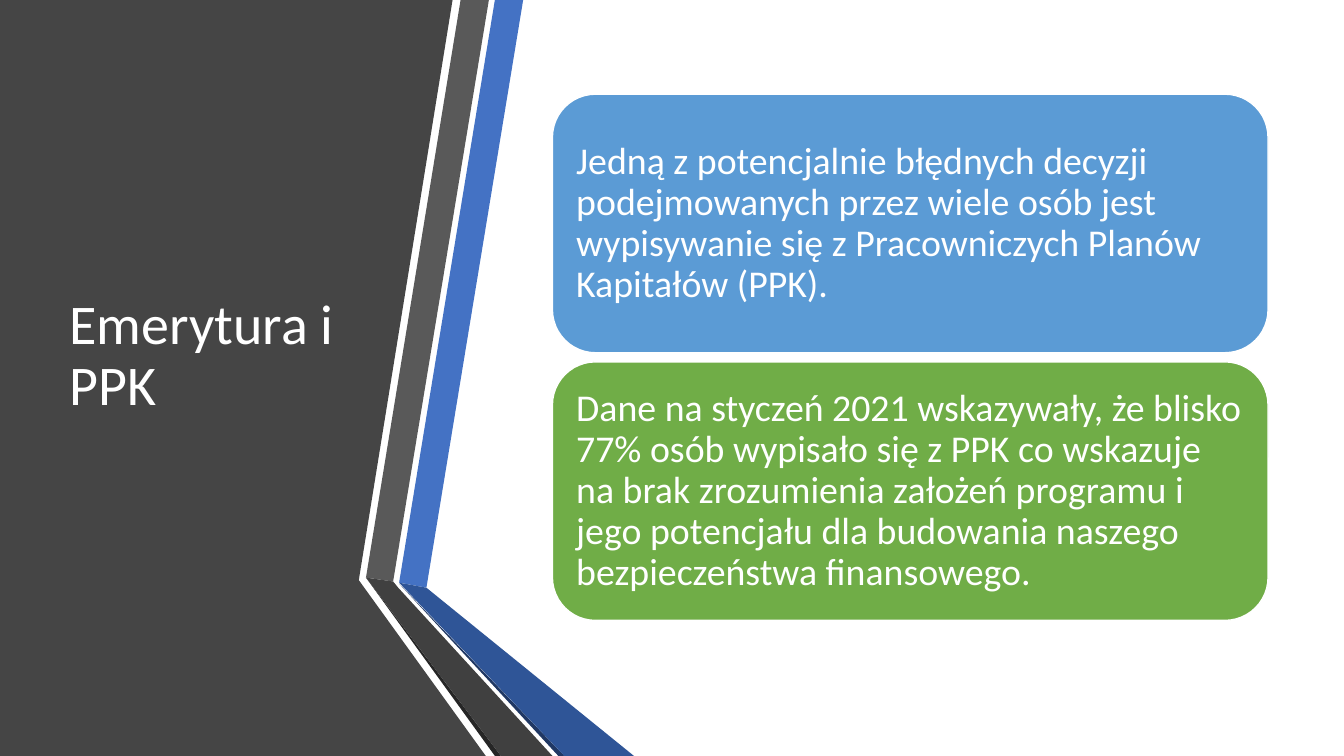
import pptx
import pptx.dml.color
import pptx.enum.shapes
import pptx.enum.text
import pptx.util

Pt = pptx.util.Pt
RGBColor = pptx.dml.color.RGBColor

WHITE = RGBColor(0xFF, 0xFF, 0xFF)
PANEL_GRAY = RGBColor(0x45, 0x45, 0x45)
BAND_BLUE = RGBColor(0x44, 0x72, 0xC4)
BAND_GRAY = RGBColor(0x59, 0x59, 0x59)
EDGE_BLACK = RGBColor(0x26, 0x26, 0x26)
EDGE_NAVY = RGBColor(0x20, 0x38, 0x64)
FOLD_BLUE = RGBColor(0x2F, 0x55, 0x97)
FOLD_GRAY = RGBColor(0x40, 0x40, 0x40)
CARD_BLUE = RGBColor(0x5B, 0x9B, 0xD5)
CARD_GREEN = RGBColor(0x70, 0xAD, 0x47)

WIDTH, HEIGHT = 960, 540
CARD_LEFT, CARD_TOP, CARD_WIDTH, CARD_HEIGHT = 394.6, 67.3, 511.2, 184.7
CARD_STEP = 191.2

POLYGONS = [
    (PANEL_GRAY, [(0, 0), (323.3, 0), (256.3, 414.4), (347, HEIGHT), (0, HEIGHT)]),
    (BAND_BLUE, [(285.1, 416.2), (304.6, 419.8), (373.7, 0), (353.5, 0)]),
    (BAND_GRAY, [(349.2, 0), (329, 0), (261.4, 412.6), (280.8, 415.4)]),
    (EDGE_BLACK, [(261.4, 412.6), (353.5, HEIGHT), (357.8, HEIGHT)]),
    (EDGE_NAVY, [(285.1, 416.9), (398.9, HEIGHT), (403.2, HEIGHT)]),
    (FOLD_BLUE, [(285.1, 416.2), (403.2, HEIGHT), (452.9, HEIGHT), (304.6, 419.8)]),
    (FOLD_GRAY, [(394.6, HEIGHT), (284.4, 419.8), (280.8, 415.4), (261.4, 412.6),
                 (357.8, HEIGHT)]),
]

CARDS = [
    (CARD_BLUE, "Jedną z potencjalnie błędnych decyzji podejmowanych przez wiele osób "
                "jest wypisywanie się z Pracowniczych Planów Kapitałów (PPK)."),
    (CARD_GREEN, "Dane na styczeń 2021 wskazywały, że blisko 77% osób wypisało się z PPK "
                 "co wskazuje na brak zrozumienia założeń programu i jego potencjału dla "
                 "budowania naszego bezpieczeństwa finansowego."),
]


def write_text(shape, text, size):
    """Set white, left-aligned, vertically centred text."""
    frame = shape.text_frame
    frame.text = text
    frame.word_wrap = True
    frame.auto_size = pptx.enum.text.MSO_AUTO_SIZE.NONE
    frame.vertical_anchor = pptx.enum.text.MSO_ANCHOR.MIDDLE
    paragraph = frame.paragraphs[0]
    paragraph.alignment = pptx.enum.text.PP_ALIGN.LEFT
    paragraph.line_spacing = 0.9
    font = paragraph.runs[0].font
    font.name = "Calibri"
    font.size = Pt(size)
    font.color.rgb = WHITE


presentation = pptx.Presentation()
presentation.slide_width = Pt(WIDTH)
presentation.slide_height = Pt(HEIGHT)
slide = presentation.slides.add_slide(presentation.slide_layouts[5])

for color, points in POLYGONS:
    corners = [(Pt(x), Pt(y)) for x, y in points]
    builder = slide.shapes.build_freeform(*corners[0])
    builder.add_line_segments(corners[1:], close=True)
    polygon = builder.convert_to_shape()
    polygon.shadow.inherit = False
    polygon.fill.solid()
    polygon.fill.fore_color.rgb = color
    polygon.line.fill.background()

title = slide.shapes.title
title.left, title.top, title.width, title.height = Pt(42.5), Pt(54), Pt(218.9), Pt(401.8)
write_text(title, "Emerytura i PPK", 40)
# The title sits in front of the dark panel
slide.shapes._spTree.append(title._element)

for index, (color, text) in enumerate(CARDS):
    card = slide.shapes.add_shape(
        pptx.enum.shapes.MSO_SHAPE.ROUNDED_RECTANGLE,
        Pt(CARD_LEFT), Pt(CARD_TOP + index * CARD_STEP), Pt(CARD_WIDTH), Pt(CARD_HEIGHT))
    card.shadow.inherit = False
    card.fill.solid()
    card.fill.fore_color.rgb = color
    card.line.color.rgb = WHITE
    card.line.width = Pt(1)
    write_text(card, text, 27)
    frame = card.text_frame
    frame.margin_left = frame.margin_right = Pt(8)
    frame.margin_top = frame.margin_bottom = Pt(8)

presentation.save("out.pptx")
